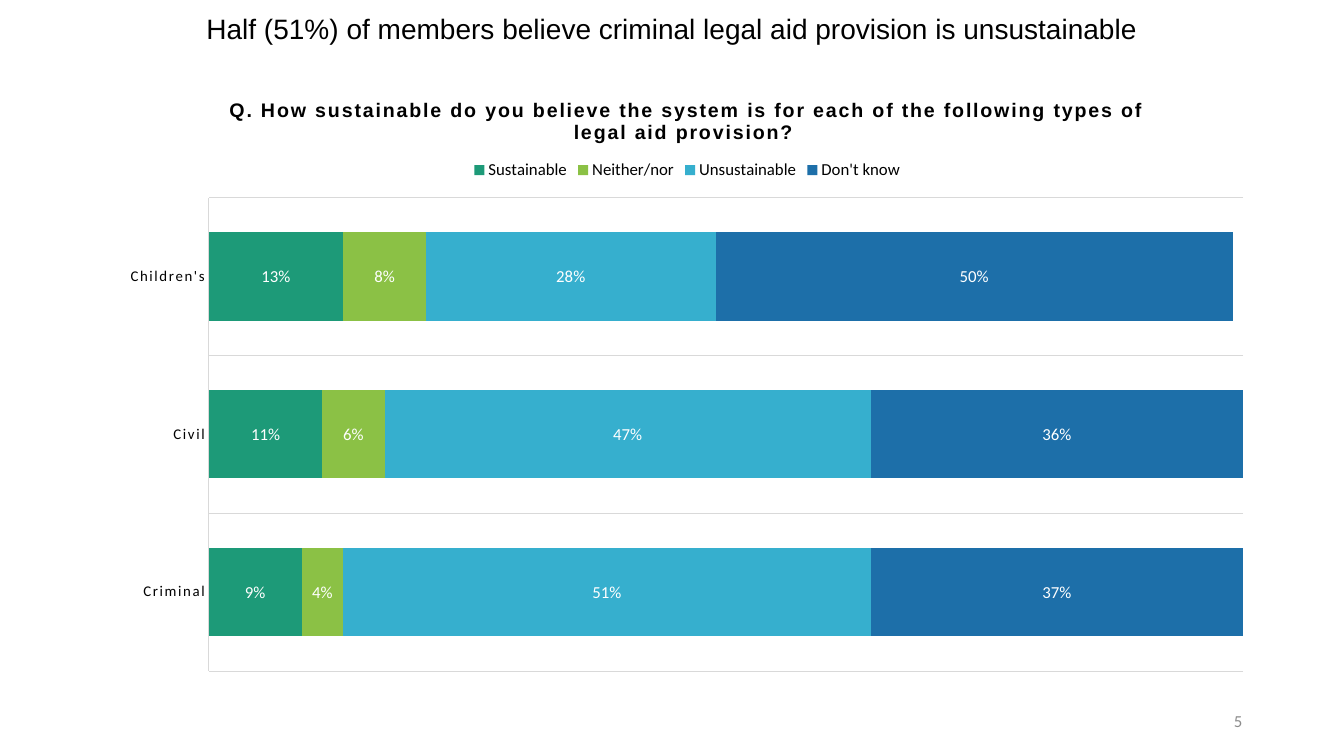
"""Slide with a stacked bar chart on the sustainability of legal aid provision."""
from lxml.etree import SubElement
from pptx import Presentation
from pptx.chart.data import CategoryChartData
from pptx.dml.color import RGBColor
from pptx.enum.chart import XL_CHART_TYPE as ChartType, XL_LABEL_POSITION as LabelPos
from pptx.enum.chart import XL_LEGEND_POSITION as LegendPos, XL_TICK_MARK as TickMark
from pptx.enum.text import MSO_ANCHOR as Anchor, PP_ALIGN as Align
from pptx.oxml.ns import qn
from pptx.util import Inches, Pt

BLACK = RGBColor(0x00, 0x00, 0x00)
WHITE = RGBColor(0xFF, 0xFF, 0xFF)
GREY = RGBColor(0x8C, 0x8C, 0x8C)
RULE = RGBColor(0xD9, 0xD9, 0xD9)
GREEN = RGBColor(0x1D, 0x9A, 0x78)
LIME = RGBColor(0x8B, 0xC1, 0x45)
SKY = RGBColor(0x36, 0xAF, 0xCE)
BLUE = RGBColor(0x1D, 0x6F, 0xA9)

CHART_WIDTH, CHART_HEIGHT = 11.5, 6.02
LETTER_SPACING = "120"
TYPES = ["Criminal", "Civil", "Children's"]
ANSWERS = [
    ("Sustainable", GREEN, (0.09, 0.11, 0.13)),
    ("Neither/nor", LIME, (0.04, 0.06, 0.08)),
    ("Unsustainable", SKY, (0.51, 0.47, 0.28)),
    ("Don't know", BLUE, (0.37, 0.36, 0.5)),
]


def write(frame, text, size, font="Arial", color=BLACK, bold=False, align=Align.CENTER, leading=None):
    paragraph = frame.paragraphs[0]
    paragraph.alignment = align
    paragraph.line_spacing = leading
    run = paragraph.add_run()
    run.text = text
    run.font.size, run.font.name, run.font.bold = Pt(size), font, bold
    run.font.color.rgb = color
    return run


def place(part, index, **inches):
    layout = part.find(qn("c:layout"))
    if layout is None:
        layout = SubElement(part, qn("c:layout"))
        part.insert(index, layout)
    manual = SubElement(layout, qn("c:manualLayout"))
    if "w" in inches:
        SubElement(manual, qn("c:layoutTarget")).set("val", "inner")
    for side in "xy":
        SubElement(manual, qn(f"c:{side}Mode")).set("val", "edge")
    for side, length in inches.items():
        whole = CHART_WIDTH if side in "xw" else CHART_HEIGHT
        SubElement(manual, qn(f"c:{side}")).set("val", str(length / whole))


deck = Presentation()
deck.slide_width, deck.slide_height = Inches(13.33), Inches(7.5)
slide = deck.slides.add_slide(deck.slide_layouts[5])

headline = slide.shapes.title
headline.left, headline.top = 0, 0
headline.width, headline.height = deck.slide_width, Inches(0.6)
headline.text_frame.vertical_anchor = Anchor.MIDDLE
write(headline.text_frame, "Half (51%) of members believe criminal legal aid provision is unsustainable",
      size=20, leading=0.9)

survey = CategoryChartData(number_format="0%")
survey.categories = TYPES
for answer, _, shares in ANSWERS:
    survey.add_series(answer, shares)
chart = slide.shapes.add_chart(ChartType.BAR_STACKED, Inches(1.07), Inches(0.76),
                               Inches(CHART_WIDTH), Inches(CHART_HEIGHT), survey).chart
chart.font.size, chart.font.name = Pt(10), "Calibri"
chart.font.color.rgb = BLACK

question = write(chart.chart_title.text_frame,
                 "Q. How sustainable do you believe the system is for each of the "
                 "following types of legal aid provision? ", size=14, bold=True)
question._r.get_or_add_rPr().set("spc", LETTER_SPACING)
chart.chart_title.include_in_layout = False

chart.has_legend = True
legend = chart.legend
legend.position, legend.include_in_layout = LegendPos.TOP, False
legend.font.size, legend.font.name = Pt(12), "Calibri"
legend.font.color.rgb = BLACK

bars = chart.plots[0]
bars.gap_width, bars.overlap, bars.vary_by_categories = 79, 100, False
for series, (_, color, _) in zip(bars.series, ANSWERS):
    series.format.fill.solid()
    series.format.fill.fore_color.rgb = color
    labels = series.data_labels
    labels.show_value, labels.position = True, LabelPos.CENTER
    labels.number_format, labels.number_format_is_linked = "0%", False
    labels.font.size, labels.font.name = Pt(12), "Calibri"
    labels.font.color.rgb = WHITE

types_axis = chart.category_axis
types_axis.major_tick_mark = types_axis.minor_tick_mark = TickMark.NONE
types_axis.has_major_gridlines = True
for line in (types_axis.format.line, types_axis.major_gridlines.format.line):
    line.color.rgb = RULE
    line.width = Pt(0.75)
type_font = types_axis.tick_labels.font
type_font.size, type_font.name = Pt(10.6), "Calibri"
type_font.color.rgb = BLACK

share_axis = chart.value_axis
share_axis.minimum_scale, share_axis.maximum_scale = 0, 1
share_axis.has_major_gridlines = False
share_axis.visible = False

chart_xml = chart._chartSpace
for type_format in chart_xml.xpath(".//c:catAx/c:txPr//a:defRPr"):
    type_format.set("spc", LETTER_SPACING)
place(chart_xml.xpath(".//c:chart/c:title")[0], 1, x=1.17, y=0.17)
place(chart_xml.xpath(".//c:legend")[0], 1, x=3.58, y=0.79)
place(chart_xml.xpath(".//c:plotArea")[0], 0, x=1, y=1.2, w=10.26, h=4.7)

page = slide.shapes.add_textbox(Inches(9.42), Inches(6.95), Inches(3), Inches(0.4)).text_frame
page.word_wrap, page.vertical_anchor = True, Anchor.MIDDLE
write(page, "5", size=12, font="Calibri", color=GREY, align=Align.RIGHT)

deck.save("out.pptx")
